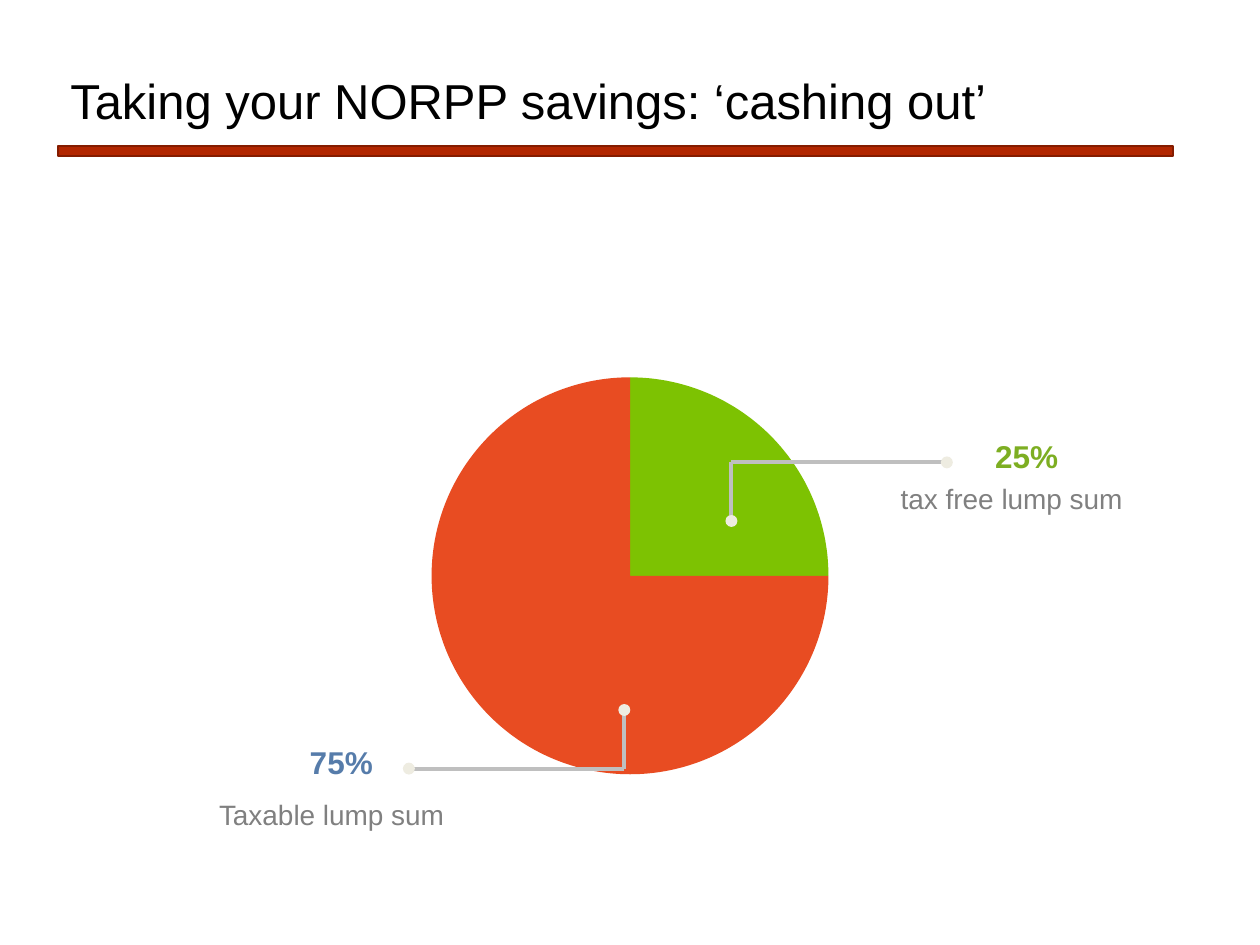
"""Build a slide that splits cashed-out pension savings into two labelled shares."""
import math
from dataclasses import dataclass

import lxml.etree
import pptx
import pptx.dml.color
import pptx.enum.shapes
import pptx.enum.text
import pptx.oxml.ns
import pptx.shapes.autoshape
import pptx.slide
import pptx.util

SHAPE = pptx.enum.shapes.MSO_SHAPE
CELL = pptx.util.Inches(0.1)
COLUMNS, ROWS = 100, 75


@dataclass(frozen=True)
class Theme:
    font: str = "Arial"
    title_size: int = 28
    value_size: int = 18
    note_size: int = 16
    title: str = "000000"
    rule: str = "B22600"
    rule_edge: str = "841C00"
    tax_free: str = "7DC202"
    taxable: str = "E84C22"
    leader: str = "BFBFBF"
    dot: str = "EEECE1"
    note: str = "808080"
    tax_free_value: str = "7DAE22"
    taxable_value: str = "567CAA"
    leader_width: float = 2.25


@dataclass(frozen=True)
class Area:
    column: float
    row: float
    width: float
    height: float

    def lengths(self) -> list[int]:
        return [grid(n) for n in (self.column, self.row, self.width, self.height)]


@dataclass(frozen=True)
class Callout:
    value: str
    note: str
    color: str
    value_area: Area
    note_area: Area
    column: float
    row: float
    direction: int


THEME = Theme()
TITLE_AREA = Area(4.6, 4, 88.5, 8.4)
RULE_AREA = Area(4.6, 11.6, 88.5, 0.8)
CENTER_COLUMN, CENTER_ROW, RADIUS = 50, 45.7, 15.75
LEADER_RUN, LEADER_RISE, DOT_SIZE = 17.1, 4.65, 0.95
ARC_STEPS = 60
CALLOUTS = (
    Callout("25%", "tax free lump sum", THEME.tax_free_value,
            Area(78, 34.2, 7.1, 4), Area(70.5, 37.7, 19.9, 3.7), 58.05, 41.35, 1),
    Callout("75%", "Taxable lump sum", THEME.taxable_value,
            Area(23.6, 58.5, 7.1, 4), Area(16.4, 62.8, 20.3, 3.7), 49.55, 56.35, -1),
)


def grid(cells: float) -> int:
    return round(cells * CELL)


def rgb(color: str) -> pptx.dml.color.RGBColor:
    return pptx.dml.color.RGBColor.from_string(color)


def paint(shape: pptx.shapes.autoshape.Shape, fill: str, edge: str | None = None) -> None:
    shape.shadow.inherit = False
    shape.fill.solid()
    shape.fill.fore_color.rgb = rgb(fill)
    if edge:
        shape.line.color.rgb = rgb(edge)
        shape.line.width = pptx.util.Pt(1)
    else:
        shape.line.fill.background()


def add_text(page: pptx.slide.Slide, area: Area, text: str, size: int, color: str,
             bold: bool = False, wrap: bool = False) -> pptx.shapes.autoshape.Shape:
    box = page.shapes.add_textbox(*area.lengths())
    box.text_frame.word_wrap = wrap
    if not wrap:
        box.text_frame.auto_size = pptx.enum.text.MSO_AUTO_SIZE.SHAPE_TO_FIT_TEXT
    span = box.text_frame.paragraphs[0].add_run()
    span.text = text
    span.font.name = THEME.font
    span.font.size = pptx.util.Pt(size)
    span.font.bold = bold
    span.font.color.rgb = rgb(color)
    return box


def add_heading(page: pptx.slide.Slide) -> None:
    paint(page.shapes.add_shape(SHAPE.RECTANGLE, *RULE_AREA.lengths()),
          THEME.rule, THEME.rule_edge)
    box = add_text(page, TITLE_AREA, "Taking your NORPP savings: ‘cashing out’",
                   THEME.title_size, THEME.title, wrap=True)
    box.text_frame.vertical_anchor = pptx.enum.text.MSO_ANCHOR.MIDDLE
    box.text_frame.paragraphs[0].line_spacing = 0.9


def add_pie(page: pptx.slide.Slide) -> None:
    angles = [math.pi / 2 * step / ARC_STEPS for step in range(ARC_STEPS + 1)]
    arc = [(grid(CENTER_COLUMN + RADIUS * math.sin(angle)),
            grid(CENTER_ROW - RADIUS * math.cos(angle))) for angle in angles]
    outline = page.shapes.build_freeform(grid(CENTER_COLUMN), grid(CENTER_ROW))
    outline.add_line_segments(arc, close=True)
    paint(outline.convert_to_shape(), THEME.tax_free)
    area = Area(CENTER_COLUMN - RADIUS, CENTER_ROW - RADIUS, 2 * RADIUS, 2 * RADIUS)
    paint(page.shapes.add_shape(SHAPE.PIE, *area.lengths()), THEME.taxable)


def add_leader(page: pptx.slide.Slide, start: tuple[float, float],
               end: tuple[float, float]) -> None:
    line = page.shapes.add_connector(pptx.enum.shapes.MSO_CONNECTOR.STRAIGHT,
                                     *[grid(n) for n in start + end])
    line.line.color.rgb = rgb(THEME.leader)
    line.line.width = pptx.util.Pt(THEME.leader_width)
    lxml.etree.SubElement(line._element.spPr, pptx.oxml.ns.qn("a:effectLst"))


def add_dot(page: pptx.slide.Slide, column: float, row: float) -> None:
    area = Area(column - DOT_SIZE / 2, row - DOT_SIZE / 2, DOT_SIZE, DOT_SIZE)
    paint(page.shapes.add_shape(SHAPE.OVAL, *area.lengths()), THEME.dot)


def add_callout(page: pptx.slide.Slide, callout: Callout) -> None:
    start = (callout.column, callout.row)
    elbow = (callout.column, callout.row - callout.direction * LEADER_RISE)
    end = (callout.column + callout.direction * LEADER_RUN, elbow[1])
    add_leader(page, start, elbow)
    add_leader(page, elbow, end)
    add_dot(page, *start)
    add_dot(page, *end)
    add_text(page, callout.value_area, callout.value, THEME.value_size,
             callout.color, bold=True)
    add_text(page, callout.note_area, callout.note, THEME.note_size, THEME.note)


def main() -> None:
    deck = pptx.Presentation()
    deck.slide_width, deck.slide_height = grid(COLUMNS), grid(ROWS)
    page = deck.slides.add_slide(deck.slide_layouts[6])
    add_heading(page)
    add_pie(page)
    for callout in CALLOUTS:
        add_callout(page, callout)
    deck.save("out.pptx")


if __name__ == "__main__":
    main()
